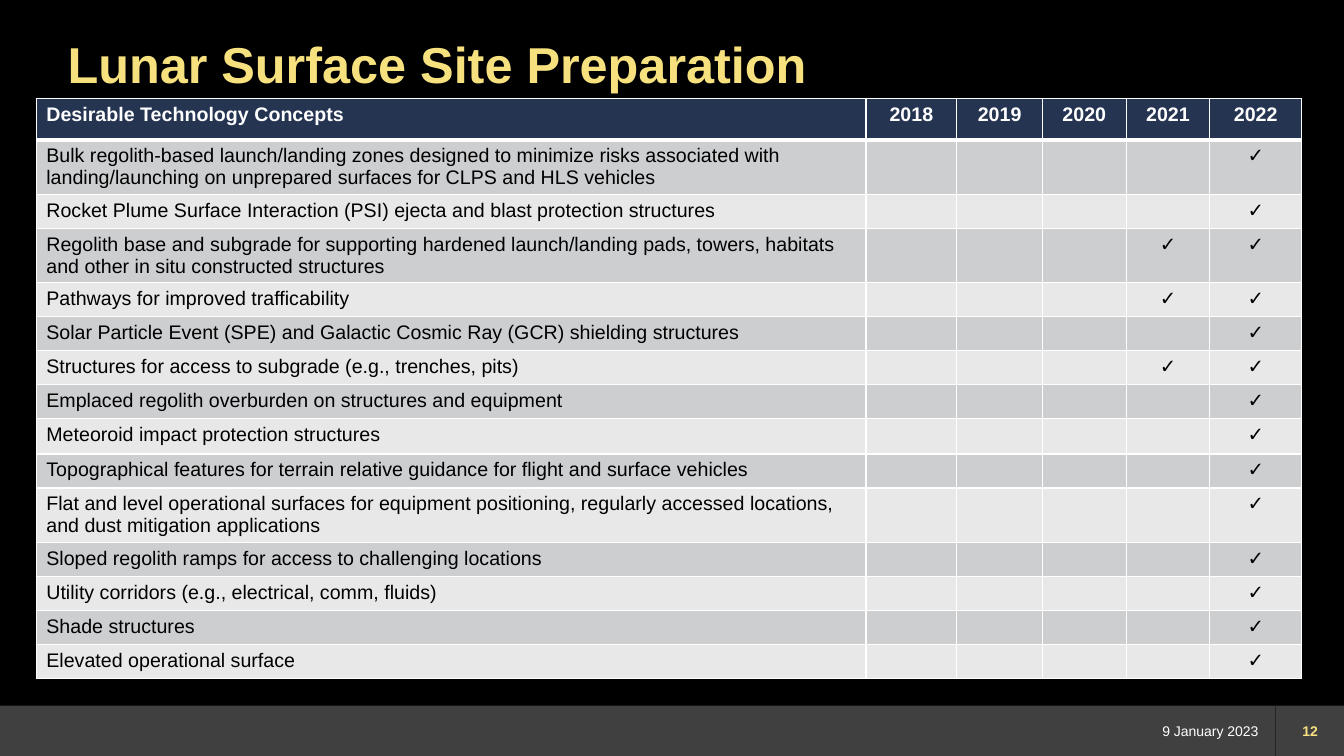
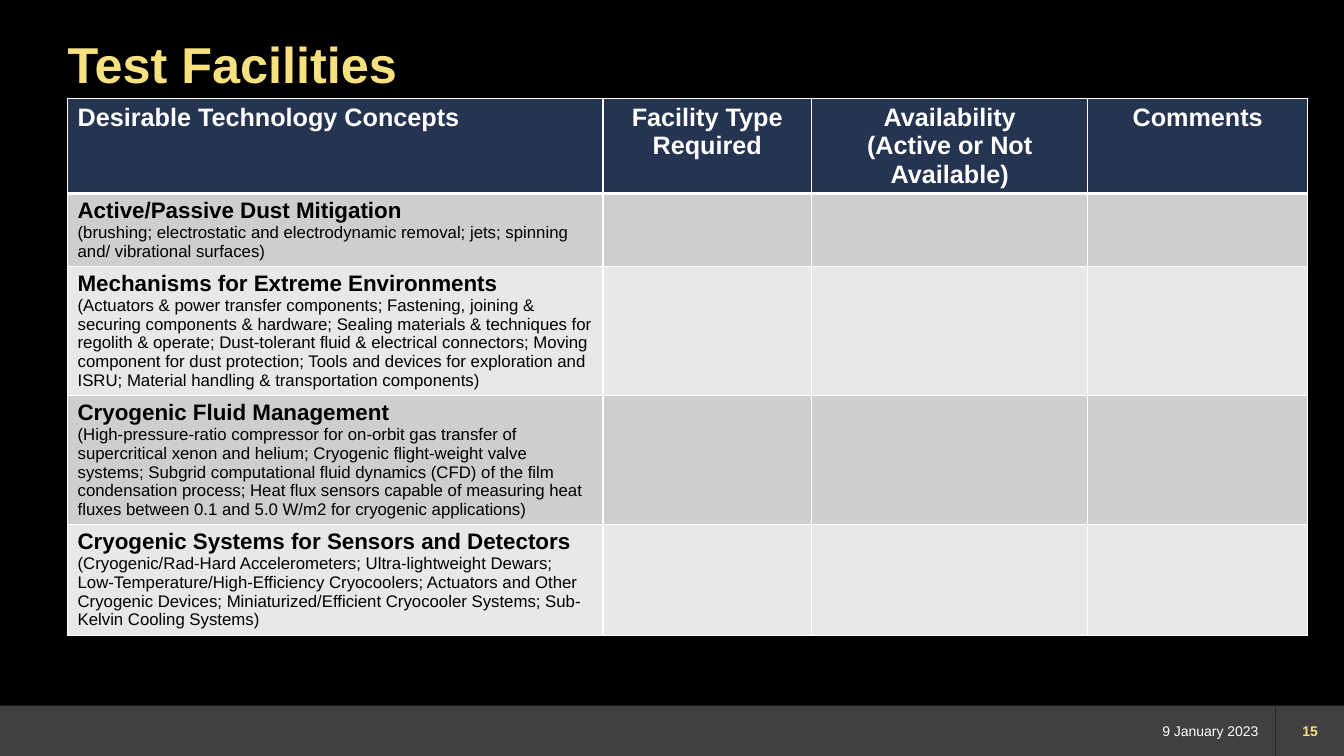
from pptx import Presentation
from pptx.dml.color import RGBColor
from pptx.enum.shapes import MSO_CONNECTOR, MSO_SHAPE
from pptx.enum.text import MSO_ANCHOR, MSO_AUTO_SIZE, PP_ALIGN
from pptx.oxml.xmlchemy import OxmlElement
from pptx.util import Inches, Pt

LEFT, CENTER, RIGHT = PP_ALIGN.LEFT, PP_ALIGN.CENTER, PP_ALIGN.RIGHT
TOP, MIDDLE = MSO_ANCHOR.TOP, MSO_ANCHOR.MIDDLE
NO_AUTOFIT = MSO_AUTO_SIZE.NONE
RECTANGLE = MSO_SHAPE.RECTANGLE
STRAIGHT = MSO_CONNECTOR.STRAIGHT

COLORS = {
    "background": "000000", "band": "404040", "divider": "262626",
    "accent": "F7E17F", "white": "FFFFFF", "black": "000000",
    "header": "243451", "odd_row": "CDCED0", "even_row": "E8E8E9",
}
FORMATS = {
    "title": {"size": Pt(36), "bold": True, "color": "accent"},
    "date": {"size": Pt(10), "bold": False, "color": "white"},
    "number": {"size": Pt(10), "bold": True, "color": "accent"},
    "year_header": {"size": Pt(14), "bold": True, "color": "white"},
    "concept": {"size": Pt(14), "bold": False, "color": "black"},
    "facility_header": {"size": Pt(18), "bold": True, "color": "white"},
    "topic": {"size": Pt(16), "bold": True, "color": "black"},
    "details": {"size": Pt(12), "bold": False, "color": "black"},
}


def write(frame, text, formats, align):
    """Fill a text frame; the n-th paragraph takes the n-th format, or the last."""
    frame.text = text
    for i, paragraph in enumerate(frame.paragraphs):
        paragraph.alignment = align
        values = FORMATS[formats[min(i, len(formats) - 1)]]
        for run in paragraph.runs:
            run.font.name = "Arial"
            for name, value in values.items():
                if name == "color":
                    run.font.color.rgb = RGBColor.from_string(COLORS[value])
                else:
                    setattr(run.font, name, value)


def set_border(cell, side, width):
    """Draw one white cell edge; call in the order L, R, T, B."""
    line = OxmlElement(f"a:ln{side}")
    line.set("w", str(Pt(width)))
    fill = OxmlElement("a:solidFill")
    color = OxmlElement("a:srgbClr")
    color.set("val", COLORS["white"])
    fill.append(color)
    line.append(fill)
    cell.fill.background()
    properties = cell.fill._xPr
    properties.insert(len(properties) - 1, line)


# Content: years marked with a tick follow each concept
YEARS = ["2018", "2019", "2020", "2021", "2022"]
concepts = [
    ("Bulk regolith-based launch/landing zones designed to minimize risks associated with "
     "landing/launching on unprepared surfaces for CLPS and HLS vehicles", ["2022"], 0.54),
    ("Rocket Plume Surface Interaction (PSI) ejecta and blast protection structures",
     ["2022"], 0.32),
    ("Regolith base and subgrade for supporting hardened launch/landing pads, towers, habitats "
     "and other in situ constructed structures", ["2021", "2022"], 0.54),
    ("Pathways for improved trafficability", ["2021", "2022"], 0.32),
    ("Solar Particle Event (SPE) and Galactic Cosmic Ray (GCR) shielding structures",
     ["2022"], 0.32),
    ("Structures for access to subgrade (e.g., trenches, pits)", ["2021", "2022"], 0.32),
    ("Emplaced regolith overburden on structures and equipment", ["2022"], 0.32),
    ("Meteoroid impact protection structures", ["2022"], 0.35),
    ("Topographical features for terrain relative guidance for flight and surface vehicles",
     ["2022"], 0.32),
    ("Flat and level operational surfaces for equipment positioning, regularly accessed "
     "locations, and dust mitigation applications", ["2022"], 0.54),
    ("Sloped regolith ramps for access to challenging locations", ["2022"], 0.32),
    ("Utility corridors (e.g., electrical, comm, fluids)", ["2022"], 0.32),
    ("Shade structures", ["2022"], 0.32),
    ("Elevated operational surface", ["2022"], 0.32),
]
facilities = [
    ("Active/Passive Dust Mitigation",
     "(brushing; electrostatic and electrodynamic removal; jets; spinning and/ vibrational "
     "surfaces)", 0.71),
    ("Mechanisms for Extreme Environments",
     "(Actuators & power transfer components; Fastening, joining & securing components & "
     "hardware; Sealing materials & techniques for regolith & operate; Dust-tolerant fluid & "
     "electrical connectors; Moving component for dust protection; Tools and devices for "
     "exploration and ISRU; Material handling & transportation components)", 1.28),
    ("Cryogenic Fluid Management",
     "(High-pressure-ratio compressor for on-orbit gas transfer of supercritical xenon and "
     "helium; Cryogenic flight-weight valve systems; Subgrid computational fluid dynamics (CFD) "
     "of the film condensation process; Heat flux sensors capable of measuring heat fluxes "
     "between 0.1 and 5.0 W/m2 for cryogenic applications)", 1.28),
    ("Cryogenic Systems for Sensors and Detectors",
     "(Cryogenic/Rad-Hard Accelerometers; Ultra-lightweight Dewars; "
     "Low-Temperature/High-Efficiency Cryocoolers; Actuators and Other Cryogenic Devices; "
     "Miniaturized/Efficient Cryocooler Systems; Sub-Kelvin Cooling Systems)", 1.1),
]
pages = [
    {
        "title": "Lunar Surface Site Preparation", "number": "12", "left": 0.36,
        "widths": [8.23, 0.9, 0.85, 0.83, 0.83, 0.91],
        "heights": [0.41] + [height for _, _, height in concepts],
        "rows": [["Desirable Technology Concepts"] + YEARS]
        + [[concept] + ["✓" if year in ticked else "" for year in YEARS]
           for concept, ticked, _ in concepts],
        "header_formats": ["year_header"], "body_formats": ["concept"],
    },
    {
        "title": "Test Facilities", "number": "15", "left": 0.67,
        "widths": [5.31, 2.07, 2.74, 2.18],
        "heights": [0.94] + [height for _, _, height in facilities],
        "rows": [["Desirable Technology Concepts", "Facility Type Required",
                  "Availability\n(Active or Not Available)", "Comments"]]
        + [[f"{topic}\n{details}", "", "", ""] for topic, details, _ in facilities],
        "header_formats": ["facility_header"], "body_formats": ["topic", "details"],
    },
]

prs = Presentation()
prs.slide_width, prs.slide_height = Inches(13.33), Inches(7.5)
layout = prs.slide_layouts[5]

# Shared background
backdrop = prs.slide_master.background.fill
backdrop.solid()
backdrop.fore_color.rgb = RGBColor.from_string(COLORS["background"])

slides = [prs.slides.add_slide(layout) for _ in pages]

# Shared footer band and divider, moved to the layout
band = slides[0].shapes.add_shape(RECTANGLE, 0, Inches(7), prs.slide_width, Inches(0.5))
band.shadow.inherit = False
band.fill.solid()
band.fill.fore_color.rgb = RGBColor.from_string(COLORS["band"])
band.line.fill.background()
divider = slides[0].shapes.add_connector(
    STRAIGHT, Inches(12.65), Inches(7), Inches(12.65), Inches(7.5))
divider.line.color.rgb = RGBColor.from_string(COLORS["divider"])
divider.line.width = Pt(1)
divider.element.spPr.append(OxmlElement("a:effectLst"))
for part in (band, divider):
    layout.shapes.element.append(part.element)

for slide, page in zip(slides, pages):
    # Title, date and page number
    title = slide.shapes.title
    title.left, title.top, title.width, title.height = (
        Inches(0.67), Inches(0.4), Inches(12), Inches(0.83))
    date = slide.shapes.add_textbox(Inches(11.08), Inches(7), Inches(1.5), Inches(0.5))
    number = slide.shapes.add_textbox(Inches(12.73), Inches(7), Inches(0.53), Inches(0.5))
    for box, text, style, align, anchor, margin in (
        (title, page["title"], "title", LEFT, TOP, 0),
        (date, "9 January 2023", "date", RIGHT, MIDDLE, 0.1),
        (number, page["number"], "number", CENTER, MIDDLE, 0),
    ):
        frame = box.text_frame
        settings = {
            "word_wrap": True, "auto_size": NO_AUTOFIT, "vertical_anchor": anchor,
            "margin_left": Inches(margin), "margin_right": Inches(margin),
            "margin_top": 0, "margin_bottom": 0,
        }
        for name, value in settings.items():
            setattr(frame, name, value)
        write(frame, text, [style], align)
    title.text_frame.paragraphs[0].line_spacing = 0.9

    # Table grid
    rows, widths, heights = page["rows"], page["widths"], page["heights"]
    table = slide.shapes.add_table(
        len(rows), len(widths), Inches(page["left"]), Inches(0.98),
        Inches(sum(widths)), Inches(sum(heights))).table
    table.horz_banding = False
    for column, width in zip(table.columns, widths):
        column.width = Inches(width)
    for row, height in zip(table.rows, heights):
        row.height = Inches(height)

    # Table cells
    for r, texts in enumerate(rows):
        formats = page["body_formats"] if r else page["header_formats"]
        fill = ("even_row", "odd_row")[r % 2] if r else "header"
        for c, text in enumerate(texts):
            cell = table.cell(r, c)
            write(cell.text_frame, text, formats, CENTER if c else LEFT)
            if not text:
                blank = OxmlElement("a:endParaRPr")
                blank.set("sz", str(int(FORMATS[formats[0]]["size"].pt * 100)))
                cell.text_frame.paragraphs[0]._p.append(blank)
            for side, width in (("L", 1), ("R", 1), ("T", 3 if r == 1 else 1),
                                ("B", 1 if r else 3)):
                set_border(cell, side, width)
            cell.fill.solid()
            cell.fill.fore_color.rgb = RGBColor.from_string(COLORS[fill])

prs.save("out.pptx")
